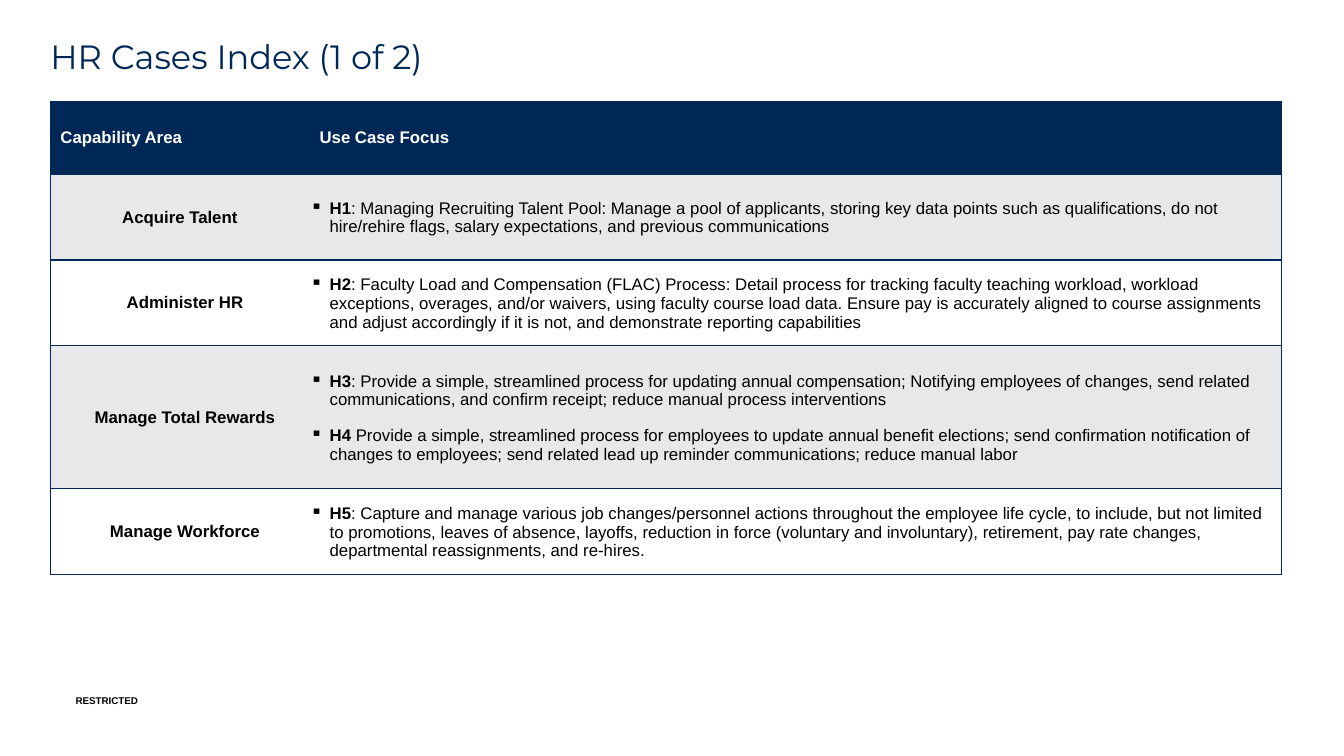
import lxml.etree
import pptx
import pptx.dml.color
import pptx.enum.text
import pptx.oxml.ns
import pptx.util

Inches, Pt = pptx.util.Inches, pptx.util.Pt
ALIGN, ANCHOR = pptx.enum.text.PP_ALIGN, pptx.enum.text.MSO_ANCHOR
NAVY = pptx.dml.color.RGBColor(0x00, 0x28, 0x56)
GREY = pptx.dml.color.RGBColor(0xE7, 0xE8, 0xE9)
WHITE = pptx.dml.color.RGBColor(0xFF, 0xFF, 0xFF)
BLACK = pptx.dml.color.RGBColor(0x00, 0x00, 0x00)

TITLE = "HR Cases Index (1 of 2)"
FOOTER = "RESTRICTED"
HEADINGS = ["Capability Area", "Use Case Focus"]
# Capability area, then its use cases as (code, description)
CAPABILITIES = [
    ("Acquire Talent", [
        ("H1", ": Managing Recruiting Talent Pool: Manage a pool of applicants, storing key data "
               "points such as qualifications, do not hire/rehire flags, salary expectations, "
               "and previous communications"),
    ]),
    ("Administer HR", [
        ("H2", ": Faculty Load and Compensation (FLAC) Process: Detail process for tracking "
               "faculty teaching workload, workload exceptions, overages, and/or waivers, using "
               "faculty course load data. Ensure pay is accurately aligned to course assignments "
               "and adjust accordingly if it is not, and demonstrate reporting capabilities"),
    ]),
    ("Manage Total Rewards", [
        ("H3", ": Provide a simple, streamlined process for updating annual compensation; "
               "Notifying employees of changes, send related communications, and confirm "
               "receipt; reduce manual process interventions"),
        ("H4", " Provide a simple, streamlined process for employees to update annual benefit "
               "elections; send confirmation notification of changes to employees; send related "
               "lead up reminder communications; reduce manual labor"),
    ]),
    ("Manage Workforce", [
        ("H5", ": Capture and manage various job changes/personnel actions throughout the "
               "employee life cycle, to include, but not limited to promotions, leaves of "
               "absence, layoffs, reduction in force (voluntary and involuntary), retirement, "
               "pay rate changes, departmental reassignments, and re-hires."),
    ]),
]

LEFT, TABLE_TOP = 0.5, 1.01
COLUMN_WIDTHS = [2.57, 9.64]
ROW_HEIGHTS = [0.72, 0.85, 0.85, 1.42, 0.85]
BULLET_INDENT = 0.19


def write(para, *pieces, size=12, font="Arial", color=BLACK, align=ALIGN.LEFT,
          indent=0, bullet=None, before=0, after=0):
    """Fill a paragraph with (text, bold) pieces."""
    properties = para._p.get_or_add_pPr()
    properties.set("marL", str(Inches(indent)))
    properties.set("indent", str(-Inches(indent) if bullet else 0))
    if bullet:
        mark = lxml.etree.SubElement(properties, pptx.oxml.ns.qn("a:buChar"))
        mark.set("char", bullet)
    para.alignment = align
    para.space_before, para.space_after = Pt(before), Pt(after)
    for text, bold in pieces:
        span = para.add_run()
        span.text = text
        span.font.size, span.font.name, span.font.bold = Pt(size), font, bold
        span.font.color.rgb = color


def add_box(page, left, top, width, height, anchor, inset=0):
    frame = page.shapes.add_textbox(*map(Inches, (left, top, width, height))).text_frame
    frame.word_wrap = True
    frame.vertical_anchor = anchor
    frame.margin_left = Inches(inset)
    frame.margin_right = frame.margin_top = frame.margin_bottom = 0
    return frame.paragraphs[0]


def style_cell(cell, fill, open_side):
    """Fill a cell and rule every side except the open one."""
    cell.vertical_anchor = ANCHOR.MIDDLE
    cell.fill.solid()
    cell.fill.fore_color.rgb = fill
    properties = cell._tc.get_or_add_tcPr()
    for position, side in enumerate("LRTB"):
        line = lxml.etree.Element(pptx.oxml.ns.qn("a:ln" + side), w=str(Pt(1)))
        if side == open_side:
            lxml.etree.SubElement(line, pptx.oxml.ns.qn("a:noFill"))
        else:
            solid = lxml.etree.SubElement(line, pptx.oxml.ns.qn("a:solidFill"))
            lxml.etree.SubElement(solid, pptx.oxml.ns.qn("a:srgbClr"), val=str(NAVY))
        properties.insert(position, line)


def add_index(page):
    table = page.shapes.add_table(
        len(ROW_HEIGHTS), len(COLUMN_WIDTHS), Inches(LEFT), Inches(TABLE_TOP),
        Inches(sum(COLUMN_WIDTHS)), Inches(sum(ROW_HEIGHTS))).table
    table.first_row = table.horz_banding = False
    for column, width in zip(table.columns, COLUMN_WIDTHS):
        column.width = Inches(width)
    for number, (row, height) in enumerate(zip(table.rows, ROW_HEIGHTS)):
        row.height = Inches(height)
        fill = NAVY if number == 0 else GREY if number % 2 else WHITE
        for cell, open_side in zip(row.cells, "RL"):
            style_cell(cell, fill, open_side)

    for number, heading in enumerate(HEADINGS):
        write(table.cell(0, number).text_frame.paragraphs[0], (heading, True), color=WHITE)

    for number, (area, cases) in enumerate(CAPABILITIES, start=1):
        area_cell, focus_cell = table.rows[number].cells
        write(area_cell.text_frame.paragraphs[0], (area, True), align=ALIGN.CENTER,
              indent=0 if number == 1 else 0.1)
        focus_cell.margin_left = focus_cell.margin_right = focus_cell.margin_top = Inches(0.01)
        focus_cell.margin_bottom = 0
        frame = focus_cell.text_frame
        for order, (code, description) in enumerate(cases):
            para = frame.add_paragraph() if order else frame.paragraphs[0]
            write(para, (code, True), (description, False), indent=BULLET_INDENT,
                  bullet="▪", before=6 if order else 0, after=6 if len(cases) > 1 and not order else 0)


def main():
    deck = pptx.Presentation()
    deck.slide_width, deck.slide_height = Inches(13.33), Inches(7.5)
    page = deck.slides.add_slide(deck.slide_layouts[6])
    footer = add_box(page, 0.73, 6.89, 4.68, 0.12, ANCHOR.BOTTOM, inset=0.02)
    write(footer, (FOOTER, True), size=7)
    title = add_box(page, LEFT, 0.4, 12.33, 0.58, ANCHOR.TOP)
    write(title, (TITLE, False), size=24, font="Montserrat", color=NAVY)
    title.line_spacing = 0.9
    add_index(page)
    deck.save("out.pptx")


if __name__ == "__main__":
    main()
